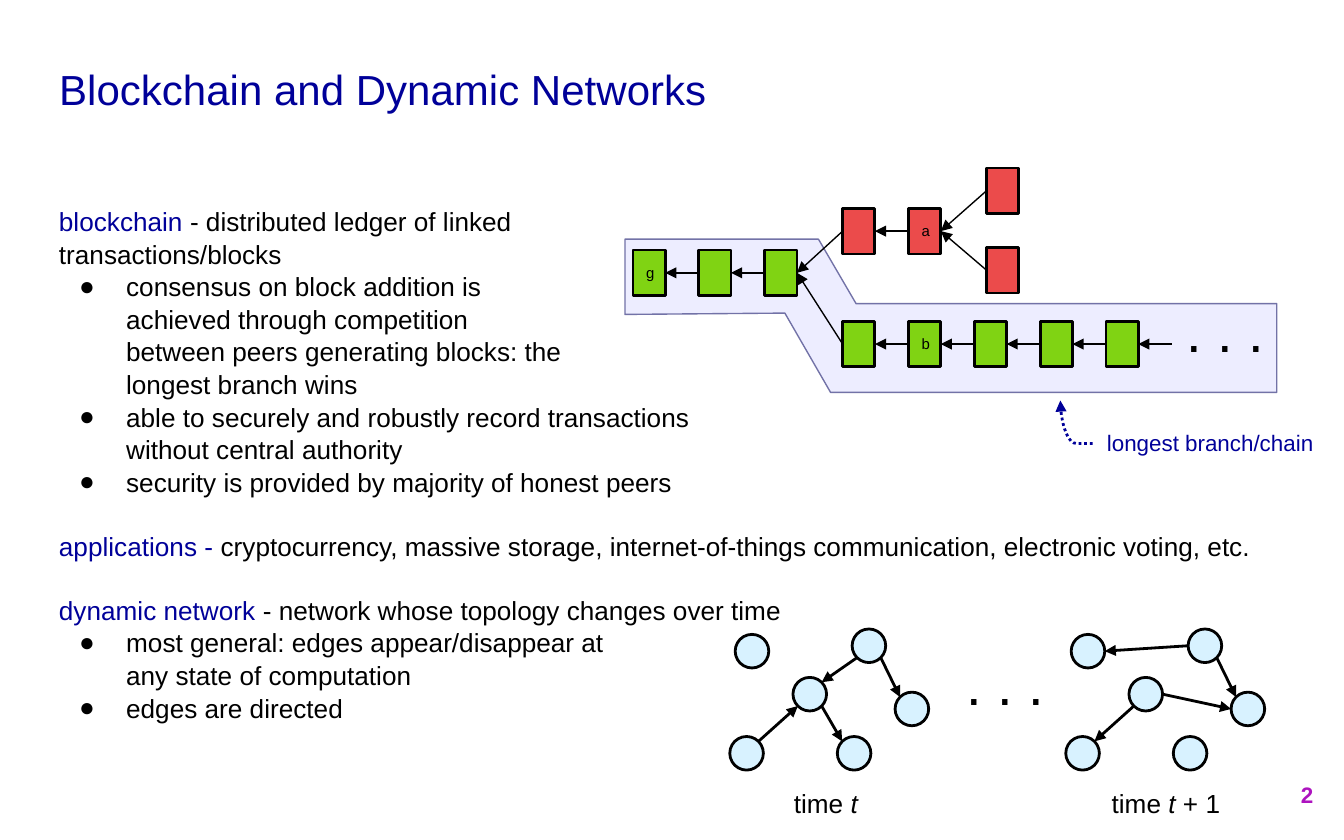
from lxml.etree import SubElement
from pptx import Presentation
from pptx.dml.color import RGBColor
from pptx.enum.dml import MSO_LINE
from pptx.enum.shapes import MSO_CONNECTOR, MSO_SHAPE
from pptx.enum.text import MSO_ANCHOR, PP_ALIGN
from pptx.oxml.ns import qn
from pptx.util import Inches, Pt

NAVY = RGBColor(0x00, 0x00, 0x99)
BLACK = RGBColor(0x00, 0x00, 0x00)
PURPLE = RGBColor(0xAD, 0x13, 0xBF)
GREEN = RGBColor(0x80, 0xD3, 0x13)
RED = RGBColor(0xEB, 0x4B, 0x4B)
PALE_BLUE = RGBColor(0xCB, 0xEE, 0xFF)
LILAC = RGBColor(0xE4, 0xE4, 0xFF)
SLATE = RGBColor(0x72, 0x72, 0xA7)

FONT = "Arial"
LINE_SPACING = 1.045
SECTION_GAP = 16.8
DOTS = ". . ."

# (term, explanation, bullets); "\n" marks a line break
SECTIONS = [
    ("blockchain", " - distributed ledger of linked\ntransactions/blocks", [
        "consensus on block addition is\nachieved through competition\n"
        "between peers generating blocks: the\nlongest branch wins",
        "able to securely and robustly record transactions\nwithout central authority",
        "security is provided by majority of honest peers",
    ]),
    ("applications - ", "cryptocurrency, massive storage, internet-of-things "
     "communication, electronic voting, etc.", []),
    ("dynamic network", " - network whose topology changes over time", [
        "most general: edges appear/disappear at\nany state of computation",
        "edges are directed",
    ]),
]

# Chain rows: name, left, top, colour, labels of the blocks
BLOCK_W, BLOCK_H, BLOCK_PITCH = 0.24, 0.34, 0.49
ROWS = [
    ("trunk", 4.71, 1.86, GREEN, ["g", "", ""]),
    ("stale", 6.27, 1.55, RED, ["", "a"]),
    ("longest", 6.27, 2.39, GREEN, ["", "b", "", "", ""]),
    ("upper", 7.34, 1.25, RED, [""]),
    ("lower", 7.34, 1.84, RED, [""]),
]
FORKS = [("stale", "trunk"), ("longest", "trunk"), ("upper", "stale"), ("lower", "stale")]
BAND = [(4.65, 1.78), (6.09, 1.78), (6.37, 2.26), (9.5, 2.26),
        (9.5, 2.92), (6.18, 2.92), (5.84, 2.33), (4.65, 2.34)]

NODE_SIZE = 0.25
NODES = {"A": (5.47, 4.72), "B": (6.34, 4.68), "C": (5.9, 5.04),
         "D": (6.66, 5.15), "E": (5.43, 5.48), "F": (6.23, 5.48)}
# (shift to the right, caption left, caption runs, edges)
NETWORKS = [
    (0, 5.45, [("time ", {}), ("t", {"italic": True})],
     ["C SE F NW", "B SW C NE", "B SE D NW", "E NE C SW"]),
    (2.5, 7.98, [("time ", {}), ("t", {"italic": True}), (" + 1", {})],
     ["C SW E NE", "B W A E", "C E D W", "B SE D NW"]),
]
DIAG = 0.354
SIDES = {"E": (0.5, 0), "W": (-0.5, 0), "NE": (DIAG, -DIAG), "NW": (-DIAG, -DIAG),
         "SE": (DIAG, DIAG), "SW": (-DIAG, DIAG)}


def write(p, text, size=14, color=BLACK, bold=False, italic=False):
    for i, line in enumerate(text.split("\n")):
        if i:
            p.add_line_break()
        r = p.add_run()
        r.text = line
        f = r.font
        f.name, f.size, f.bold, f.italic = FONT, Pt(size), bold, italic
        f.color.rgb = color


def frame(sp, anchor=MSO_ANCHOR.TOP):
    tf = sp.text_frame
    tf.word_wrap = True
    tf.vertical_anchor = anchor
    tf.margin_left = tf.margin_right = tf.margin_top = tf.margin_bottom = Inches(0.1)
    return tf


def text_box(box, runs, align=PP_ALIGN.LEFT, anchor=MSO_ANCHOR.TOP):
    tf = frame(shapes.add_textbox(*map(Inches, box)), anchor)
    p = tf.paragraphs[0]
    p.alignment = align
    for text, fmt in runs:
        write(p, text, **fmt)


def paint(sp, fill, line=BLACK, width=1.5, alpha=100):
    sp.shadow.inherit = False
    sp.fill.solid()
    sp.fill.fore_color.rgb = fill
    if alpha < 100:
        clr = sp.fill._xPr.find(".//" + qn("a:srgbClr"))
        SubElement(clr, qn("a:alpha"), val=str(alpha * 1000))
    sp.line.color.rgb = line
    sp.line.width = Pt(width)


def side(sp, name):
    """Point on the outline of a shape, in EMU."""
    dx, dy = SIDES[name]
    return (int(sp.left + sp.width * (0.5 + dx)), int(sp.top + sp.height * (0.5 + dy)))


def arrow(start, end, width=0.75, color=BLACK, kind=MSO_CONNECTOR.STRAIGHT, dash=None):
    c = shapes.add_connector(kind, *start, *end)
    c.line.color.rgb = color
    c.line.width = Pt(width)
    if dash:
        c.line.dash_style = dash
    SubElement(c.line._get_or_add_ln(), qn("a:tailEnd"), type="triangle")
    SubElement(c._element.spPr, qn("a:effectLst"))
    return c


def bullet(p):
    pPr = p._p.get_or_add_pPr()
    pPr.set("marL", str(Inches(0.5)))
    pPr.set("indent", str(Inches(-0.35)))
    clr = SubElement(pPr, qn("a:buClr"))
    SubElement(clr, qn("a:srgbClr"), val=str(BLACK))
    SubElement(pPr, qn("a:buFont"), typeface=FONT)
    SubElement(pPr, qn("a:buChar"), char="●")


prs = Presentation()
prs.slide_width, prs.slide_height = Inches(10), Inches(6.25)
s = prs.slides.add_slide(prs.slide_layouts[5])
shapes = s.shapes

title = shapes.title
title.left, title.top, title.width, title.height = map(Inches, (0.34, 0.31, 9.32, 0.7))
p = frame(title, MSO_ANCHOR.MIDDLE).paragraphs[0]
p.alignment = PP_ALIGN.LEFT
write(p, "Blockchain and Dynamic Networks", size=22.5, color=NAVY)

text_box((9.27, 5.67, 0.6, 0.48), [("2", {"size": 12, "color": PURPLE, "bold": True})],
         PP_ALIGN.RIGHT, MSO_ANCHOR.MIDDLE)

corners = [(round(x * 100), round(y * 100)) for x, y in BAND]
outline = shapes.build_freeform(*corners[0], scale=Inches(0.01))
outline.add_line_segments(corners[1:], close=True)
paint(outline.convert_to_shape(), LILAC, SLATE, 0.75, alpha=65)

tf = frame(shapes.add_textbox(*map(Inches, (0.34, 1.42, 9.32, 4.37))))
for i, (term, explanation, bullets) in enumerate(SECTIONS):
    p = tf.add_paragraph() if i else tf.paragraphs[0]
    p.line_spacing = LINE_SPACING
    if i:
        p.space_before = Pt(SECTION_GAP)
    write(p, term, color=NAVY)
    write(p, explanation)
    for item in bullets:
        p = tf.add_paragraph()
        p.line_spacing = LINE_SPACING
        bullet(p)
        write(p, item)

chain = {}
for name, left, top, color, labels in ROWS:
    chain[name] = row = []
    for i, label in enumerate(labels):
        block = shapes.add_shape(MSO_SHAPE.RECTANGLE, Inches(left + i * BLOCK_PITCH),
                                 Inches(top), Inches(BLOCK_W), Inches(BLOCK_H))
        paint(block, color)
        if label:
            p = frame(block).paragraphs[0]
            p.alignment = PP_ALIGN.LEFT
            write(p, label, size=8)
        if row:
            arrow(side(block, "W"), side(row[-1], "E"))
        row.append(block)
for child, parent in FORKS:
    arrow(side(chain[child][0], "W"), side(chain[parent][-1], "E"))
tip_x, tip_y = side(chain["longest"][-1], "E")
arrow((tip_x + Inches(BLOCK_PITCH - BLOCK_W), tip_y), (tip_x, tip_y))

for shift, caption_left, caption, edges in NETWORKS:
    nodes = {}
    for name, (x, y) in NODES.items():
        nodes[name] = shapes.add_shape(MSO_SHAPE.OVAL, Inches(x + shift), Inches(y),
                                       Inches(NODE_SIZE), Inches(NODE_SIZE))
        paint(nodes[name], PALE_BLUE, alpha=74)
    for edge in edges:
        tail, tail_side, head, head_side = edge.split()
        arrow(side(nodes[tail], tail_side), side(nodes[head], head_side), width=1.5)
    text_box((caption_left, 5.76, 1.39, 0.44), caption, PP_ALIGN.CENTER)

for left, top in [(8.73, 2.11), (7.09, 4.73)]:
    text_box((left, top, 0.9, 0.71), [(DOTS, {"size": 30})])

text_box((8.1, 3.09, 1.81, 0.32), [("longest branch/chain", {"size": 12, "color": NAVY})],
         PP_ALIGN.CENTER)
pointer = arrow((Inches(8.17), Inches(3.02)), (Inches(7.85), Inches(3.26)), 1.5, NAVY,
                MSO_CONNECTOR.CURVE, MSO_LINE.ROUND_DOT)
pointer._element.spPr.find(qn("a:xfrm")).set("rot", str(90 * 60000))
bend = pointer._element.spPr.find(qn("a:prstGeom")).find(qn("a:avLst"))
SubElement(bend, qn("a:gd"), name="adj1", fmla="val 0")

prs.save("out.pptx")
